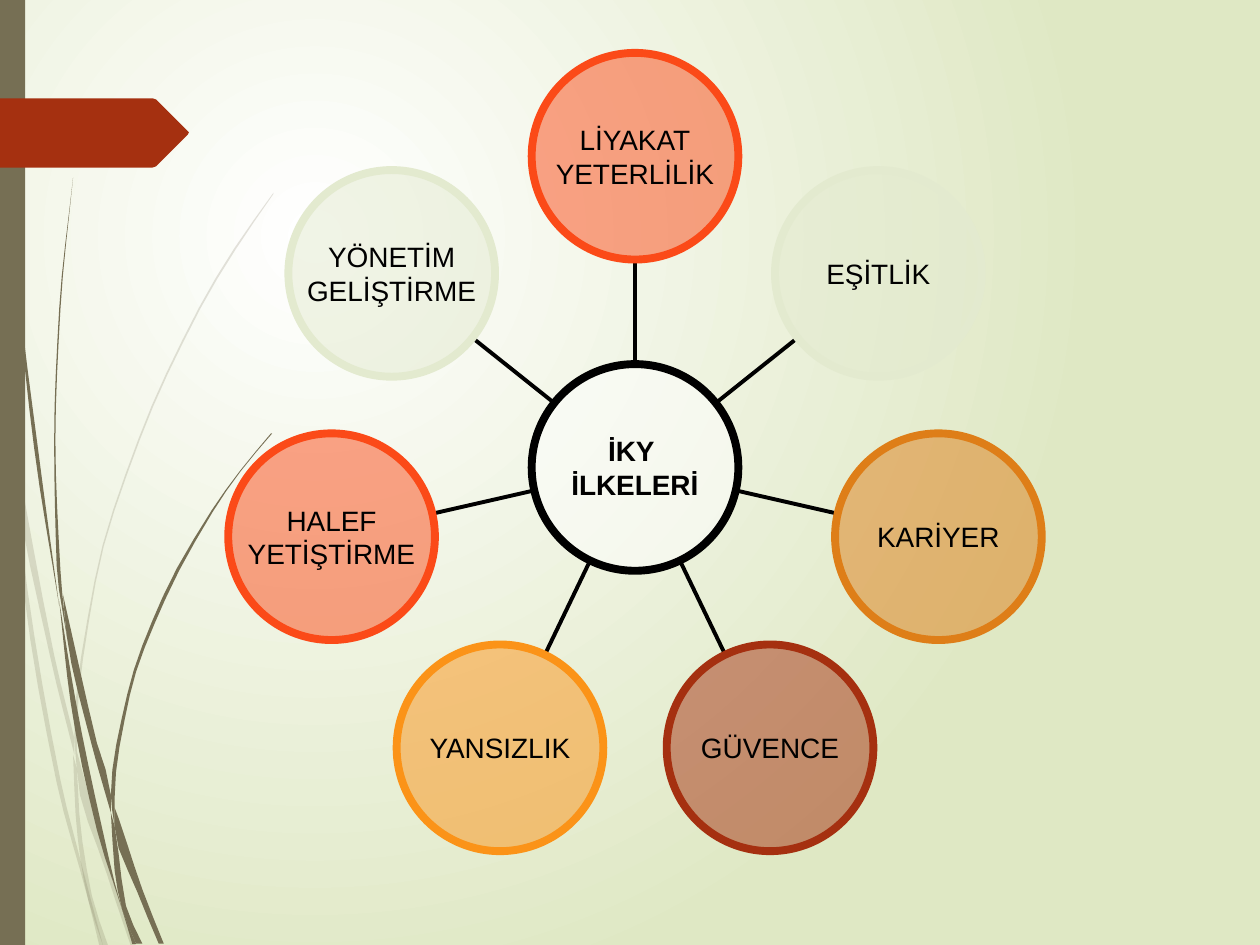
from math import cos, pi, sin

from lxml.etree import SubElement
from pptx import Presentation
from pptx.dml.color import RGBColor as Rgb
from pptx.enum.shapes import MSO_CONNECTOR as Conn, MSO_SHAPE as Kind
from pptx.enum.text import MSO_ANCHOR as Anchor, PP_ALIGN as Align
from pptx.oxml.ns import qn
from pptx.util import Inches, Pt

WHITE = Rgb(0xFF, 0xFF, 0xFF)
BLACK = Rgb(0x00, 0x00, 0x00)
PALE = Rgb(0xDF, 0xE8, 0xC4)
OLIVE = Rgb(0x76, 0x6F, 0x54)
BRICK = Rgb(0xA5, 0x30, 0x10)
RED = Rgb(0xFB, 0x4A, 0x18)
AMBER = Rgb(0xFB, 0x93, 0x18)
OCHRE = Rgb(0xDE, 0x7E, 0x18)
SAGE = Rgb(0xE3, 0xEA, 0xCF)

COLS, ROWS = 10, 7.5
HUB = (5.04, 3.71)
RING, RADIUS = 2.47, 0.82

# Grass blades: left and right edge of each, from top to bottom
FAINT = [
    ([(0, 2.82), (0.06, 3.22), (0.08, 3.5)], [(0, 2.99), (0.07, 3.44), (0.08, 3.5)]),
    ([(0.1, 3.45), (0.12, 3.76), (0.4, 5.22), (0.59, 5.99)],
     [(0.1, 3.45), (0.43, 5.2), (0.59, 5.86)]),
    ([(0.61, 5.96), (0.61, 6.1), (0.85, 6.94), (1.04, 7.51)],
     [(0.61, 5.96), (0.64, 6.07), (0.88, 6.92), (1.08, 7.51)]),
    ([(0.08, 3.5), (0.19, 4.7), (0.45, 6.21), (0.7, 7.14), (0.79, 7.51)],
     [(0.08, 3.5), (0.22, 4.69), (0.48, 6.19), (0.64, 6.83), (0.82, 7.51)]),
    ([(0.58, 5.99), (0.6, 6.46), (0.64, 6.83), (0.7, 7.14), (0.82, 7.51)],
     [(0.58, 5.99), (0.61, 6.1), (0.63, 6.46), (0.73, 7.11), (0.86, 7.51)]),
    ([(2.17, 1.53), (1.86, 1.97), (1.58, 2.44), (1.1, 3.48), (0.75, 4.61),
      (0.59, 5.84), (0.61, 6.1)],
     [(2.17, 1.54), (1.87, 1.98), (1.59, 2.45), (1.11, 3.49), (0.76, 4.62),
      (0.61, 5.84), (0.61, 5.96)]),
]
DARK = [
    ([(0.02, 0), (0.05, 1.1), (0.14, 2.33), (0.27, 3.55), (0.47, 4.81)],
     [(0.03, 0), (0.06, 1.09), (0.15, 2.32), (0.3, 3.55), (0.47, 4.81)]),
    ([(0.5, 4.72), (0.53, 5.05), (0.73, 5.92), (0.88, 6.45)],
     [(0.5, 4.72), (0.77, 5.9), (0.88, 6.31), (0.88, 6.45)]),
    ([(0.91, 6.41), (0.91, 6.56), (1.09, 7.08), (1.26, 7.49)],
     [(0.91, 6.41), (0.94, 6.49), (1.13, 7.06), (1.3, 7.49)]),
    ([(0.47, 4.77), (0.56, 5.57), (0.77, 6.59), (0.97, 7.22), (1.05, 7.49)],
     [(0.47, 4.77), (0.6, 5.56), (0.81, 6.57), (0.97, 7.22), (1.08, 7.49)]),
    ([(0.58, 1.41), (0.47, 2.45), (0.43, 3.49), (0.45, 4.49), (0.53, 5.05)],
     [(0.58, 1.41), (0.48, 2.45), (0.44, 3.49), (0.48, 4.53), (0.53, 5.05)]),
    ([(2.15, 3.44), (1.91, 3.73), (1.68, 4.05), (1.29, 4.74), (1.01, 5.51),
      (0.88, 6.31), (0.91, 6.56)],
     [(2.16, 3.44), (1.91, 3.74), (1.69, 4.06), (1.31, 4.76), (1.03, 5.52),
      (0.91, 6.33), (0.91, 6.56)]),
    ([(0.88, 6.45), (0.91, 6.91), (0.97, 7.22), (1.08, 7.49)],
     [(0.88, 6.45), (0.91, 6.56), (1, 7.19), (1.13, 7.49)]),
]
TAG = [(0, 0.78), (1.21, 0.78), (1.24, 0.79), (1.49, 1.04), (1.5, 1.05),
       (1.49, 1.07), (1.24, 1.32), (1.21, 1.33), (0, 1.33)]

# Clockwise from the top
NODES = [
    (["LİYAKAT", "YETERLİLİK"], RED),
    (["EŞİTLİK"], SAGE),
    (["KARİYER"], OCHRE),
    (["GÜVENCE"], BRICK),
    (["YANSIZLIK"], AMBER),
    (["HALEF", "YETİŞTİRME"], RED),
    (["YÖNETİM", "GELİŞTİRME"], SAGE),
]


def smooth(edge):
    """Points of a monotone cubic, x over y, through the edge's points."""
    pairs = list(zip(edge, edge[1:]))
    rate = [(c - a) / (d - b) for (a, b), (c, d) in pairs]
    mids = [2 * p * q / (p + q) if p * q > 0 else 0 for p, q in zip(rate, rate[1:])]
    lean = [rate[0], *mids, rate[-1]]
    out = [edge[0]]
    for ((a, b), (c, d)), m, n in zip(pairs, lean, lean[1:]):
        steps = min(4, 1 + int(4 * (d - b)))
        for t in (i / steps for i in range(1, steps + 1)):
            bend = t * (1 - t) * (d - b) * (m * (1 - t) - n * t)
            ease = t * t * (3 - 2 * t)
            out.append((a + (c - a) * ease + bend, b + (d - b) * t))
    return out


def polar(turn, reach):
    """Point at a share of a turn clockwise from above the hub."""
    return HUB[0] + reach * sin(2 * pi * turn), HUB[1] - reach * cos(2 * pi * turn)


class Deck:
    font = {"name": "Arial", "size": Pt(16)}
    frame = {"margin_left": 0, "margin_top": 0, "margin_right": 0, "margin_bottom": 0,
             "word_wrap": False, "vertical_anchor": Anchor.MIDDLE}

    def __init__(self):
        self.prs = Presentation()
        self.prs.slide_width, self.prs.slide_height = Inches(10), Inches(7.5)
        self.slide = self.prs.slides.add_slide(self.prs.slide_layouts[6])
        self.shapes = self.slide.shapes

    def at(self, col, row):
        return round(self.prs.slide_width * col / COLS), round(self.prs.slide_height * row / ROWS)

    def style(self, obj, vals):
        for key, val in vals.items():
            setattr(obj, key, val)

    def paint(self, shape, color, alpha=100, edge=None):
        shape.shadow.inherit = False
        shape.fill.solid()
        shape.fill.fore_color.rgb = color
        if alpha < 100:
            tint = shape.fill._xPr.find(".//" + qn("a:srgbClr"))
            SubElement(tint, qn("a:alpha"), val=str(alpha * 1000))
        if edge is None:
            shape.line.fill.background()
        else:
            shape.line.color.rgb, shape.line.width = edge, Pt(4.5)

    def glow(self, inner, outer):
        fill = self.slide.background.fill
        fill.gradient()
        for stop, color, pos in zip(fill.gradient_stops, (inner, outer), (0, 1)):
            stop.color.rgb, stop.position = color, pos
        grad = fill._xPr.find(qn("a:gradFill"))
        grad.remove(grad.find(qn("a:lin")))
        ring = SubElement(grad, qn("a:path"), {"path": "circle"})
        SubElement(ring, qn("a:fillToRect"), l="50000", t="50000", r="100000", b="100000")

    def outline(self, pts, color, alpha=100):
        pts = [self.at(*p) for p in pts]
        pen = self.shapes.build_freeform(*pts[0])
        pen.add_line_segments(pts[1:], close=True)
        self.paint(pen.convert_to_shape(), color, alpha)

    def bar(self, col, row, wide, high, color):
        box = self.shapes.add_shape(Kind.RECTANGLE, *self.at(col, row), *self.at(wide, high))
        self.paint(box, color)

    def spoke(self, turn):
        ends = self.at(*polar(turn, RADIUS)) + self.at(*polar(turn, RING - RADIUS))
        line = self.shapes.add_connector(Conn.STRAIGHT, *ends)
        line.line.color.rgb, line.line.width = BLACK, Pt(2.25)
        SubElement(line._element.spPr, qn("a:effectLst"))

    def disc(self, mid, words, color, edge, bold=False):
        x, y = mid
        disc = self.shapes.add_shape(Kind.OVAL, *self.at(x - RADIUS, y - RADIUS),
                                     *self.at(2 * RADIUS, 2 * RADIUS))
        self.paint(disc, color, 50, edge)
        text = disc.text_frame
        self.style(text, self.frame)
        text.text = "\n".join(words)
        for para in text.paragraphs:
            para.alignment = Align.CENTER
            font = para.runs[0].font
            self.style(font, {**self.font, "bold": bold})
            font.color.rgb = BLACK


def main():
    deck = Deck()

    # Backdrop
    deck.glow(WHITE, PALE)
    for blades, alpha in ((FAINT, 20), (DARK, 100)):
        for left, right in blades:
            deck.outline(smooth(left) + smooth(right)[::-1], OLIVE, alpha)
    deck.bar(0, 0, 0.2, ROWS, OLIVE)
    deck.outline(TAG, BRICK)

    # Wheel of principles, hub on top
    for i, (words, color) in reversed(list(enumerate(NODES))):
        turn = i / len(NODES)
        deck.spoke(turn)
        deck.disc(polar(turn, RING), words, color, color)
    deck.disc(HUB, ["İKY ", "İLKELERİ"], WHITE, BLACK, bold=True)

    deck.prs.save("out.pptx")


if __name__ == "__main__":
    main()
